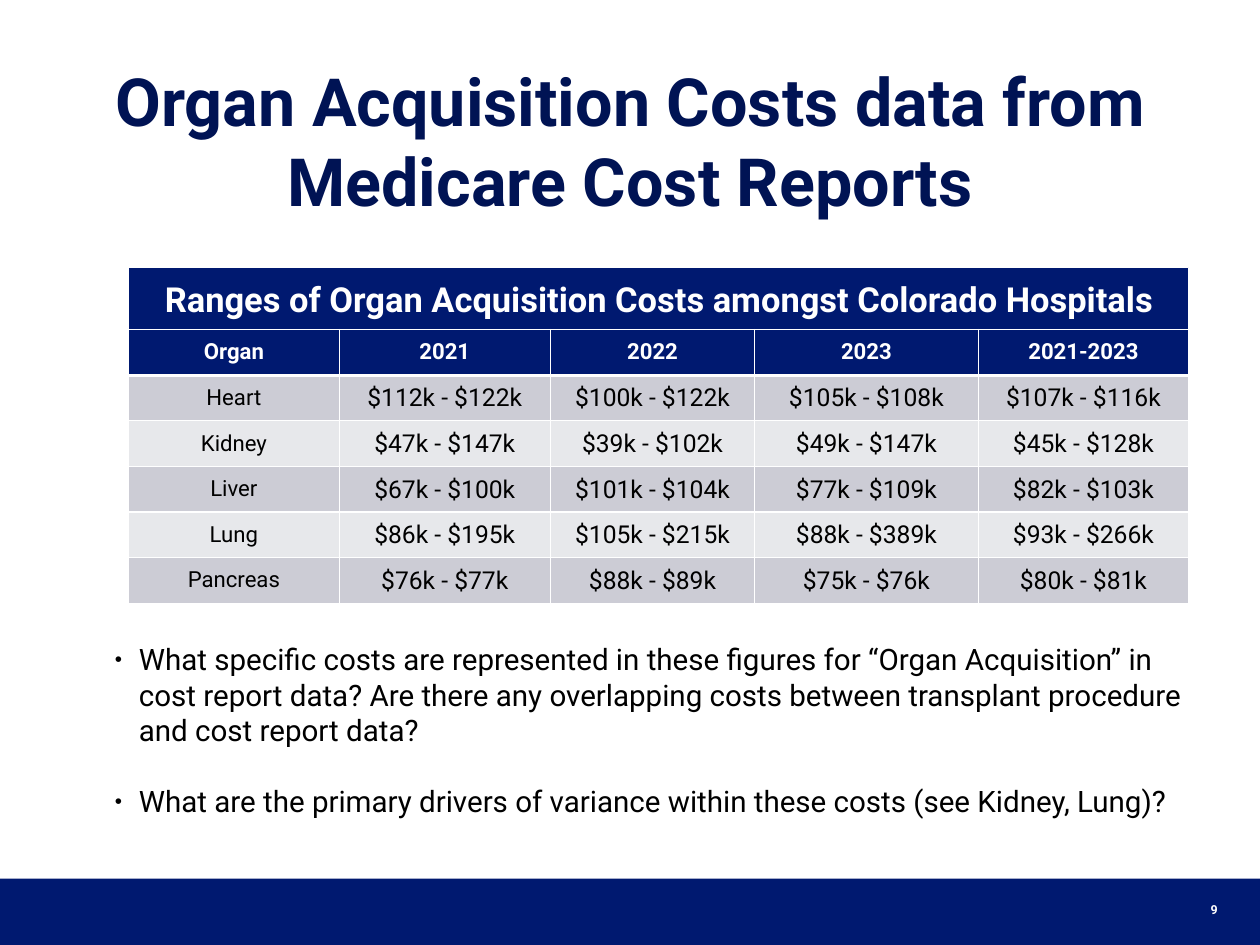
from pptx import Presentation
from pptx.dml.color import RGBColor
from pptx.enum.shapes import MSO_SHAPE
from pptx.enum.text import MSO_ANCHOR, PP_ALIGN
from pptx.oxml.ns import qn
from pptx.util import Pt
from lxml.etree import SubElement

FONT = "Roboto"
NAVY = RGBColor(0x00, 0x19, 0x70)
TITLE_NAVY = RGBColor(0x00, 0x13, 0x54)
WHITE = RGBColor(0xFF, 0xFF, 0xFF)
BLACK = RGBColor(0x00, 0x00, 0x00)
BANDS = [RGBColor(0xCC, 0xCC, 0xD5), RGBColor(0xE7, 0xE8, 0xEB)]

WIDTH, HEIGHT = 1024, 768
COLUMN_WIDTHS = [171.4, 171.4, 166.3, 181.4, 171.4]
BANNER_HEIGHT = 50.4
COSTS = [
    ["Organ", "2021", "2022", "2023", "2021-2023"],
    ["Heart", "$112k - $122k", "$100k - $122k", "$105k - $108k", "$107k - $116k"],
    ["Kidney", "$47k - $147k", "$39k - $102k", "$49k - $147k", "$45k - $128k"],
    ["Liver", "$67k - $100k", "$101k - $104k", "$77k - $109k", "$82k - $103k"],
    ["Lung", "$86k - $195k", "$105k - $215k", "$88k - $389k", "$93k - $266k"],
    ["Pancreas", "$76k - $77k", "$88k - $89k", "$75k - $76k", "$80k - $81k"],
]
QUESTIONS = [
    "What specific costs are represented in these figures for “Organ Acquisition” in "
    "cost report data? Are there any overlapping costs between transplant procedure "
    "and cost report data?",
    "What are the primary drivers of variance within these costs (see Kidney, Lung)?",
]


def write(paragraph, text, size, color, bold=False, align=PP_ALIGN.CENTER):
    paragraph.alignment = align
    run = paragraph.add_run()
    run.text = text
    run.font.name = FONT
    run.font.size = Pt(size)
    run.font.bold = bold
    run.font.color.rgb = color


def add_navy_block(slide, left, top, width, height):
    block = slide.shapes.add_shape(
        MSO_SHAPE.RECTANGLE, Pt(left), Pt(top), Pt(width), Pt(height))
    block.shadow.inherit = False
    block.fill.solid()
    block.fill.fore_color.rgb = NAVY
    block.line.fill.background()
    return block


def add_title(slide, left, top, width, height):
    title = slide.shapes.title
    title.left, title.top, title.width, title.height = map(Pt, (left, top, width, height))
    frame = title.text_frame
    frame.margin_left = frame.margin_right = frame.margin_top = frame.margin_bottom = 0
    frame.vertical_anchor = MSO_ANCHOR.TOP
    frame.word_wrap = True
    write(frame.paragraphs[0], "Organ Acquisition Costs data from Medicare Cost Reports",
          54, TITLE_NAVY, bold=True)


def add_borders(cell, top_width, bottom_width):
    properties = cell._tc.get_or_add_tcPr()
    for side, points in (("L", 1), ("R", 1), ("T", top_width), ("B", bottom_width)):
        border = SubElement(properties, qn(f"a:ln{side}"), w=str(Pt(points)))
        fill = SubElement(border, qn("a:solidFill"))
        SubElement(fill, qn("a:srgbClr"), val=str(WHITE))


def fill_cost_cell(cell, text, row, column):
    is_header, is_amount = row == 0, row > 0 and column > 0
    add_borders(cell, 3 if row == 1 else 1, 3 if is_header else 1)
    cell.fill.solid()
    cell.fill.fore_color.rgb = NAVY if is_header else BANDS[(row - 1) % 2]
    cell.vertical_anchor = MSO_ANCHOR.MIDDLE
    if is_amount:
        cell.margin_left = cell.margin_right = cell.margin_top = Pt(0.72)
        cell.margin_bottom = 0
    write(cell.text_frame.paragraphs[0], text, 20 if is_amount else 18,
          WHITE if is_header else BLACK, bold=is_header)


def add_cost_table(slide, left, top, width, height):
    """Place the banner with the organ cost table right below it."""
    banner = add_navy_block(slide, left, top, width, BANNER_HEIGHT)
    banner.line.color.rgb = WHITE
    banner.line.width = Pt(0.75)
    banner.text_frame.word_wrap = True
    banner.text_frame.vertical_anchor = MSO_ANCHOR.MIDDLE
    write(banner.text_frame.paragraphs[0],
          "Ranges of Organ Acquisition Costs amongst Colorado Hospitals",
          28, WHITE, bold=True)

    table_height = height - BANNER_HEIGHT
    costs = slide.shapes.add_table(
        len(COSTS), len(COLUMN_WIDTHS), Pt(left), Pt(top + BANNER_HEIGHT),
        Pt(width), Pt(table_height)).table
    for column, column_width in zip(costs.columns, COLUMN_WIDTHS):
        column.width = Pt(column_width)
    for row, values in enumerate(COSTS):
        costs.rows[row].height = Pt(table_height / len(COSTS))
        for column, text in enumerate(values):
            fill_cost_cell(costs.cell(row, column), text, row, column)


def add_questions(slide, left, top, width, height):
    frame = slide.shapes.add_textbox(Pt(left), Pt(top), Pt(width), Pt(height)).text_frame
    frame.word_wrap = True
    for index, question in enumerate(QUESTIONS):
        paragraph = frame.add_paragraph() if index else frame.paragraphs[0]
        properties = paragraph._p.get_or_add_pPr()
        properties.set("marL", str(Pt(57.6)))
        properties.set("indent", str(Pt(-19.4)))
        SubElement(properties, qn("a:buSzPct"), val="70000")
        SubElement(properties, qn("a:buFont"), typeface="Arial")
        SubElement(properties, qn("a:buChar"), char="•")
        if index:
            paragraph.space_before = Pt(28.8)
        write(paragraph, question, 24, BLACK, align=PP_ALIGN.LEFT)


def add_footer(slide, left, top, width, height):
    add_navy_block(slide, left, top, width, height)
    number_width = 169.2
    frame = slide.shapes.add_textbox(
        Pt(left + width - number_width - 27.4), Pt(top + 5), Pt(number_width),
        Pt(41)).text_frame
    frame.word_wrap = True
    frame.vertical_anchor = MSO_ANCHOR.MIDDLE
    write(frame.paragraphs[0], "9", 10.1, WHITE, bold=True, align=PP_ALIGN.RIGHT)


def main():
    presentation = Presentation()
    presentation.slide_width, presentation.slide_height = Pt(WIDTH), Pt(HEIGHT)
    slide = presentation.slides.add_slide(presentation.slide_layouts[5])
    add_footer(slide, 0, 714, WIDTH, 54)
    add_title(slide, 70.6, 49, 883.4, 159)
    add_cost_table(slide, 104.4, 217.4, sum(COLUMN_WIDTHS), 272.9)
    add_questions(slide, 48.2, 517.7, 928, 192)
    presentation.save("out.pptx")


if __name__ == "__main__":
    main()
